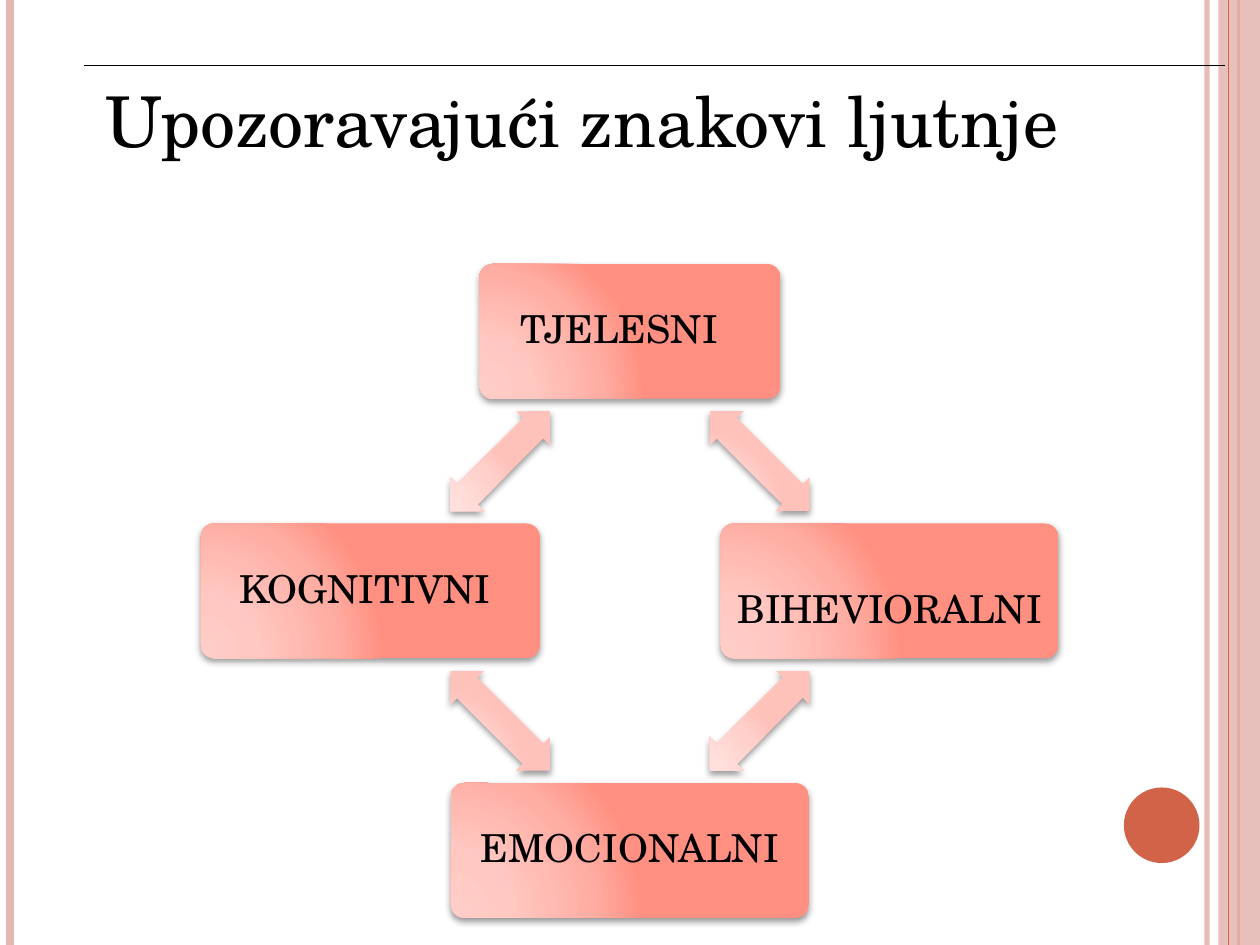
from dataclasses import dataclass
from lxml.etree import SubElement
from pptx import Presentation
from pptx.dml.color import RGBColor
from pptx.enum.shapes import MSO_CONNECTOR, MSO_SHAPE
from pptx.enum.text import MSO_ANCHOR, PP_ALIGN
from pptx.oxml.ns import qn
from pptx.util import Inches, Pt


@dataclass(frozen=True)
class Theme:
    font: str = "TeX Gyre Schola"
    title_size: int = 40
    label_size: int = 22
    ink: str = "000000"
    accent: str = "D16349"
    pale: str = "E5B7B1"
    node_stops: tuple = ((0, "FFCDC7"), (30, "FFC9C2"), (75, "FFACA2"), (100, "FF9081"))
    arrow_stops: tuple = ((0, "FFE2DF"), (30, "FFE0DC"), (75, "FFD0CB"), (100, "FFC2BB"))


THEME = Theme()
CENTER_X, CENTER_Y, RADIUS = 5, 4.69, 2.06
NODE_HEIGHT = 1.07
ARROW_WIDTH, ARROW_HEIGHT = 1.12, 0.38
INSET = 0.08
DIRECTIONS = ((0, -1), (1, 0), (0, 1), (-1, 0))
NODES = (
    ("TJELESNI", 2.39, 0.17, 0),
    ("BIHEVIORALNI", 2.68, 0, 0.32),
    ("EMOCIONALNI", 2.84, 0, 0),
    ("KOGNITIVNI", 2.69, 0.09, 0),
)
EDGE_LINES = (
    (9.58, THEME.pale, 3, 93),
    (0.08, THEME.pale, 4.5, 100),
    (9.83, THEME.accent, 1.5, 100),
)


def rgb(code):
    return RGBColor.from_string(code)


def set_opacity(shape, percent):
    if percent < 100:
        color = next(shape.element.spPr.iter(qn("a:srgbClr")))
        SubElement(color, qn("a:alpha"), val=str(percent * 1000))


def add_shadow(effects):
    shadow = SubElement(effects, qn("a:outerShdw"), blurRad=str(Pt(4)),
                        dist=str(Pt(2)), dir="5400000", rotWithShape="0")
    color = SubElement(shadow, qn("a:srgbClr"), val=THEME.ink)
    SubElement(color, qn("a:alpha"), val="40000")


def fill_radial(shape, stops):
    shape.fill.background()
    properties = shape.element.spPr
    gradient = SubElement(properties, qn("a:gradFill"), rotWithShape="1")
    stop_list = SubElement(gradient, qn("a:gsLst"))
    for position, code in stops:
        stop = SubElement(stop_list, qn("a:gs"), pos=str(position * 1000))
        SubElement(stop, qn("a:srgbClr"), val=code)
    path = SubElement(gradient, qn("a:path"))
    path.set("path", "circle")
    SubElement(path, qn("a:fillToRect"), l="5000", t="100000", r="120000", b="10000")
    properties.replace(properties.find(qn("a:noFill")), gradient)


def add_line(page, start, end, code, width, opacity=100, shadow=False):
    line = page.shapes.add_connector(
        MSO_CONNECTOR.STRAIGHT, *(Inches(value) for value in (*start, *end)))
    line.line.color.rgb = rgb(code)
    line.line.width = Pt(width)
    set_opacity(line, opacity)
    effects = SubElement(line.element.spPr, qn("a:effectLst"))
    if shadow:
        add_shadow(effects)


def add_plain(page, kind, left, top, width, height):
    shape = page.shapes.add_shape(
        kind, *(Inches(value) for value in (left, top, width, height)))
    shape.line.fill.background()
    shape.shadow.inherit = False
    return shape


def add_solid(page, kind, place, code, opacity=100):
    shape = add_plain(page, kind, *place)
    shape.fill.solid()
    shape.fill.fore_color.rgb = rgb(code)
    set_opacity(shape, opacity)


def add_glossy(page, kind, center_x, center_y, width, height, stops):
    shape = add_plain(page, kind, center_x - width / 2, center_y - height / 2, width, height)
    fill_radial(shape, stops)
    add_shadow(shape.element.spPr.find(qn("a:effectLst")))
    return shape


def write(shape, text, size, align, anchor, insets):
    frame = shape.text_frame
    frame.text = text
    frame.word_wrap = True
    frame.vertical_anchor = anchor
    frame.margin_left, frame.margin_top, frame.margin_right, frame.margin_bottom = (
        Inches(value) for value in insets)
    para = frame.paragraphs[0]
    para.alignment = align
    para.line_spacing = 0.9
    font = para.runs[0].font
    font.name, font.size, font.color.rgb = THEME.font, Pt(size), rgb(THEME.ink)


def add_frame(page):
    for x, code, width, opacity in EDGE_LINES:
        add_line(page, (x, 0), (x, 7.5), code, width, opacity)
    add_solid(page, MSO_SHAPE.RECTANGLE, (9.67, 0, 0.33, 7.5), THEME.pale, 87)
    add_line(page, (9.75, 0), (9.75, 7.5), THEME.accent, 0.75)
    add_solid(page, MSO_SHAPE.OVAL, (8.92, 6.25, 0.6, 0.6), THEME.accent)


def add_title(page, text):
    add_line(page, (0.67, 0.52), (9.72, 0.52), THEME.ink, 1, shadow=True)
    title = page.shapes.title
    title.left, title.top = Inches(0.67), Inches(0.52)
    title.width, title.height = Inches(9.06), Inches(1.89)
    write(title, text, THEME.title_size, PP_ALIGN.LEFT, MSO_ANCHOR.TOP, (0.17,) * 4)


def add_cycle(page):
    for index, ((across, down), node) in enumerate(zip(DIRECTIONS, NODES)):
        label, width, extra_right, extra_top = node
        box = add_glossy(page, MSO_SHAPE.ROUNDED_RECTANGLE, CENTER_X + RADIUS * across,
                         CENTER_Y + RADIUS * down, width, NODE_HEIGHT, THEME.node_stops)
        box.adjustments[0] = 0.1
        write(box, label, THEME.label_size, PP_ALIGN.CENTER, MSO_ANCHOR.MIDDLE,
              (INSET, INSET + extra_top, INSET + extra_right, INSET))

        next_across, next_down = DIRECTIONS[(index + 1) % len(DIRECTIONS)]
        arrow = add_glossy(page, MSO_SHAPE.LEFT_RIGHT_ARROW,
                           CENTER_X + RADIUS * (across + next_across) / 2,
                           CENTER_Y + RADIUS * (down + next_down) / 2,
                           ARROW_WIDTH, ARROW_HEIGHT, THEME.arrow_stops)
        arrow.adjustments[0], arrow.adjustments[1] = 0.6, 0.5
        arrow.rotation = 45 + 90 * index


def main():
    deck = Presentation()
    deck.slide_width, deck.slide_height = Inches(10), Inches(7.5)
    page = deck.slides.add_slide(deck.slide_layouts[5])
    add_frame(page)
    add_cycle(page)
    add_title(page, "Upozoravajući znakovi ljutnje")
    deck.save("out.pptx")


if __name__ == "__main__":
    main()
